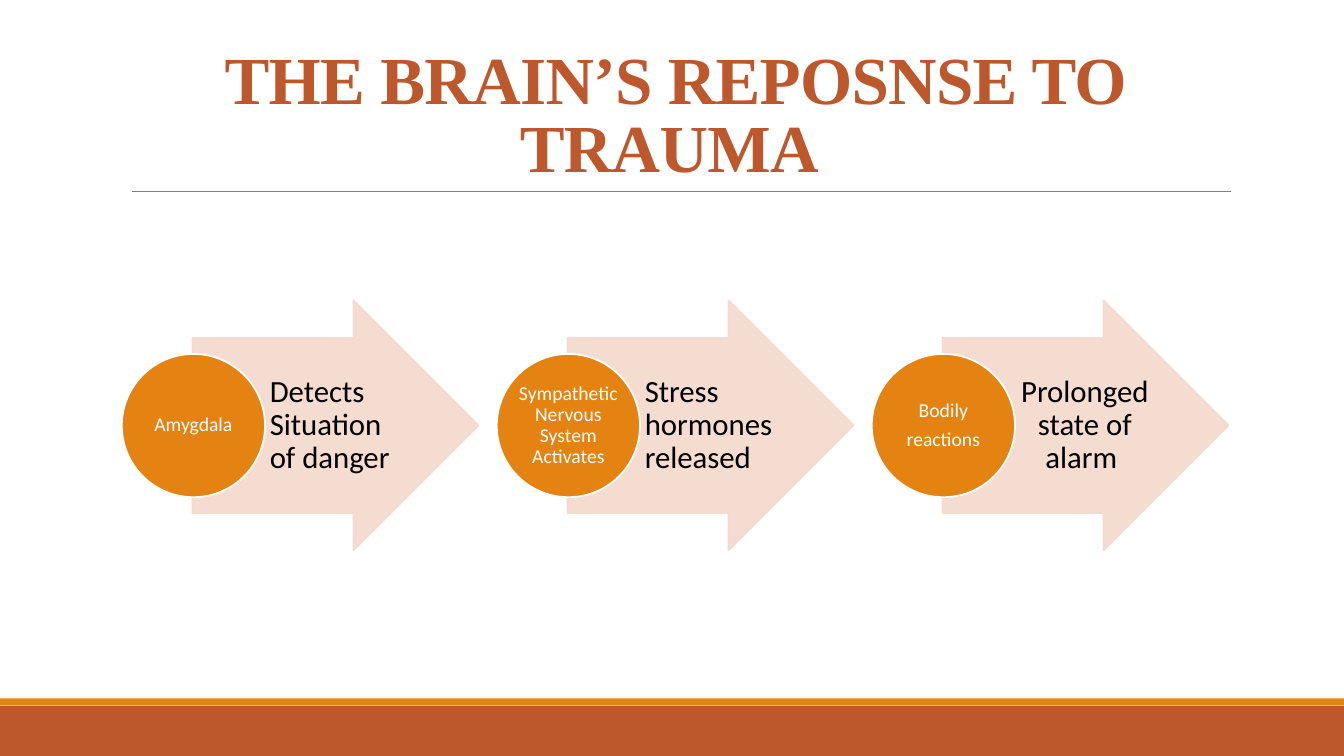
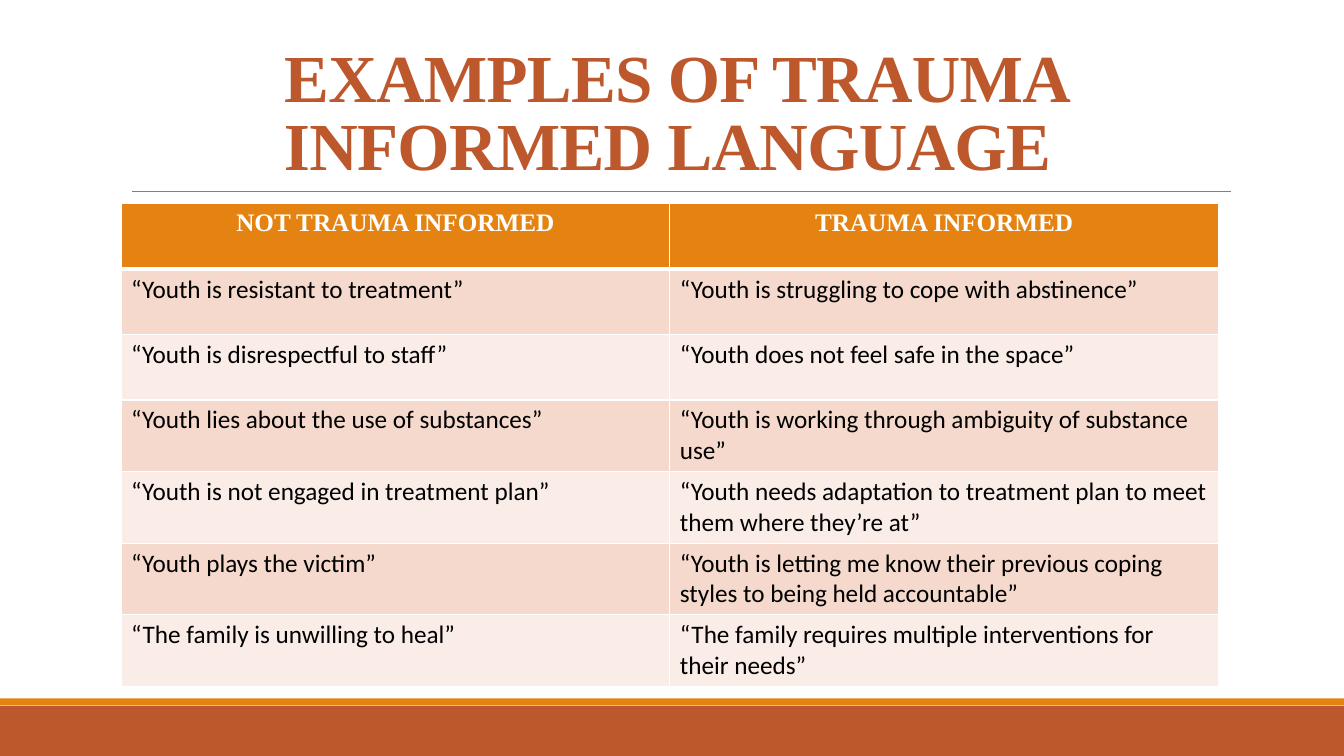
from lxml.etree import SubElement
from pptx import Presentation
from pptx.dml.color import RGBColor
from pptx.enum.shapes import MSO_CONNECTOR, MSO_SHAPE
from pptx.enum.text import MSO_ANCHOR, MSO_AUTO_SIZE, PP_ALIGN
from pptx.oxml.ns import qn
from pptx.util import Cm, Pt

RUST = RGBColor(0xBD, 0x58, 0x2C)
ORANGE = RGBColor(0xE4, 0x83, 0x12)
PEACH = RGBColor(0xF5, 0xD9, 0xCC)
PALE_PEACH = RGBColor(0xFA, 0xED, 0xE7)
GREY = RGBColor(0x80, 0x80, 0x80)
WHITE = RGBColor(0xFF, 0xFF, 0xFF)
BLACK = RGBColor(0, 0, 0)
HEADING_FONT = "Times New Roman"
BODY_FONT = "Calibri"


def style_text(frame, font_name, size, color, align=PP_ALIGN.LEFT, bold=False, spacing=1.0):
    frame.word_wrap = True
    for paragraph in frame.paragraphs:
        paragraph.alignment = align
        paragraph.line_spacing = spacing
        paragraph.font.name = font_name
        paragraph.font.size = Pt(size)
        paragraph.font.bold = bold
        paragraph.font.color.rgb = color


def add_filled(slide, preset, left, top, width, height, fill):
    shape = slide.shapes.add_shape(preset, Cm(left), Cm(top), Cm(width), Cm(height))
    shape.shadow.inherit = False
    shape.fill.solid()
    shape.fill.fore_color.rgb = fill
    shape.line.fill.background()
    return shape


prs = Presentation()
prs.slide_width, prs.slide_height = Cm(33.87), Cm(19.05)
title_only = prs.slide_layouts[5]
for placeholder in list(title_only.placeholders)[1:]:
    placeholder.element.getparent().remove(placeholder.element)

slides = []
for heading, heading_top in [
    ("THE BRAIN’S REPOSNSE TO TRAUMA ", 0.79),
    ("EXAMPLES OF TRAUMA INFORMED LANGUAGE ", 0.74),
]:
    slide = prs.slides.add_slide(title_only)
    title = slide.shapes.title
    title.left, title.top, title.width, title.height = Cm(3.05), Cm(heading_top), Cm(27.94), Cm(4.04)
    title.text_frame.text = heading
    title.text_frame.auto_size = MSO_AUTO_SIZE.NONE
    title.text_frame.vertical_anchor = MSO_ANCHOR.BOTTOM
    style_text(title.text_frame, HEADING_FONT, 48, RUST, PP_ALIGN.CENTER, True, 0.85)
    title.text_frame.paragraphs[0].runs[0]._r.get_or_add_rPr().set("spc", "-50")
    slides.append(slide)
response_slide, language_slide = slides

footer_band = add_filled(response_slide, MSO_SHAPE.RECTANGLE, 0, 17.78, 33.87, 1.27, RUST)
footer_stripe = add_filled(response_slide, MSO_SHAPE.RECTANGLE, 0, 17.6, 33.87, 0.17, ORANGE)
title_rule = response_slide.shapes.add_connector(
    MSO_CONNECTOR.STRAIGHT, Cm(3.33), Cm(4.83), Cm(31.01), Cm(4.83))
title_rule.line.color.rgb = GREY
title_rule.line.width = Pt(0.5)
SubElement(title_rule.element.spPr, qn("a:effectLst"))
for shared in (footer_band, footer_stripe, title_rule):
    title_only.shapes.element.append(shared.element)

stages = [
    ("Amygdala", "Detects Situation of danger", PP_ALIGN.LEFT),
    ("Sympathetic Nervous System Activates", "Stress hormones released", PP_ALIGN.LEFT),
    ("Bodily\nreactions", "Prolonged state of alarm ", PP_ALIGN.CENTER),
]
for index, (stage, effect, effect_align) in enumerate(stages):
    left = 3.07 + 9.45 * index

    arrow = add_filled(response_slide, MSO_SHAPE.RIGHT_ARROW, left + 1.78, 7.57, 7.21, 6.3, PEACH)
    arrow.adjustments[0], arrow.adjustments[1] = 0.7, 0.5
    arrow.line.color.rgb = PEACH
    arrow.line.width = Pt(1.25)
    for tint in arrow.element.spPr.iter(qn("a:srgbClr")):
        SubElement(tint, qn("a:alpha")).set("val", "90000")

    effect_box = response_slide.shapes.add_textbox(Cm(left + 3.58), Cm(8.51), Cm(3.51), Cm(4.42))
    frame = effect_box.text_frame
    frame.text = effect
    frame.vertical_anchor = MSO_ANCHOR.MIDDLE
    frame.margin_left, frame.margin_right = Cm(0.15), Cm(0.08)
    frame.margin_top = frame.margin_bottom = Cm(0.05)
    style_text(frame, BODY_FONT, 22, BLACK, effect_align, spacing=0.9)

    circle = add_filled(response_slide, MSO_SHAPE.OVAL, left, 8.92, 3.61, 3.61, ORANGE)
    circle.line.color.rgb = WHITE
    circle.line.width = Pt(1.25)
    frame = circle.text_frame
    frame.text = stage
    frame.vertical_anchor = MSO_ANCHOR.MIDDLE
    frame.margin_left = frame.margin_right = frame.margin_top = frame.margin_bottom = Cm(0.02)
    style_text(frame, BODY_FONT, 14, WHITE, PP_ALIGN.CENTER, spacing=0.9)
    for paragraph in frame.paragraphs[1:]:
        paragraph.space_before = Pt(5)

phrases = [
    ("NOT TRAUMA INFORMED", "TRAUMA INFORMED"),
    ("“Youth is resistant to treatment”", "“Youth is struggling to cope with abstinence”"),
    ("“Youth is disrespectful to staff”", "“Youth does not feel safe in the space”"),
    ("“Youth lies about the use of substances”",
     "“Youth is working through ambiguity of substance use”"),
    ("“Youth is not engaged in treatment plan”",
     "“Youth needs adaptation to treatment plan to meet them where they’re at”"),
    ("“Youth plays the victim”",
     "“Youth is letting me know their previous coping styles to being held accountable”"),
    ("“The family is unwilling to heal”",
     "“The family requires multiple interventions for their needs”"),
]
phrase_table = language_slide.shapes.add_table(
    len(phrases), 2, Cm(3.05), Cm(5.13), Cm(27.66), Cm(1.65 * len(phrases))).table
phrase_table.first_row = phrase_table.horz_banding = False
for row, pair in enumerate(phrases):
    for column, phrase in enumerate(pair):
        cell = phrase_table.cell(row, column)
        cell.text = phrase
        borders = {"a:lnL": 1, "a:lnR": 1, "a:lnT": 3 if row == 1 else 1, "a:lnB": 3 if row == 0 else 1}
        for side, weight in borders.items():
            border = SubElement(cell._tc.get_or_add_tcPr(), qn(side), w=str(Pt(weight)))
            SubElement(SubElement(border, qn("a:solidFill")), qn("a:srgbClr")).set("val", str(WHITE))
        cell.fill.solid()
        if row == 0:
            cell.fill.fore_color.rgb = ORANGE
            style_text(cell.text_frame, HEADING_FONT, 18, WHITE, PP_ALIGN.CENTER, True)
        else:
            cell.fill.fore_color.rgb = PEACH if row % 2 else PALE_PEACH
            style_text(cell.text_frame, BODY_FONT, 18, BLACK)

prs.save("out.pptx")
